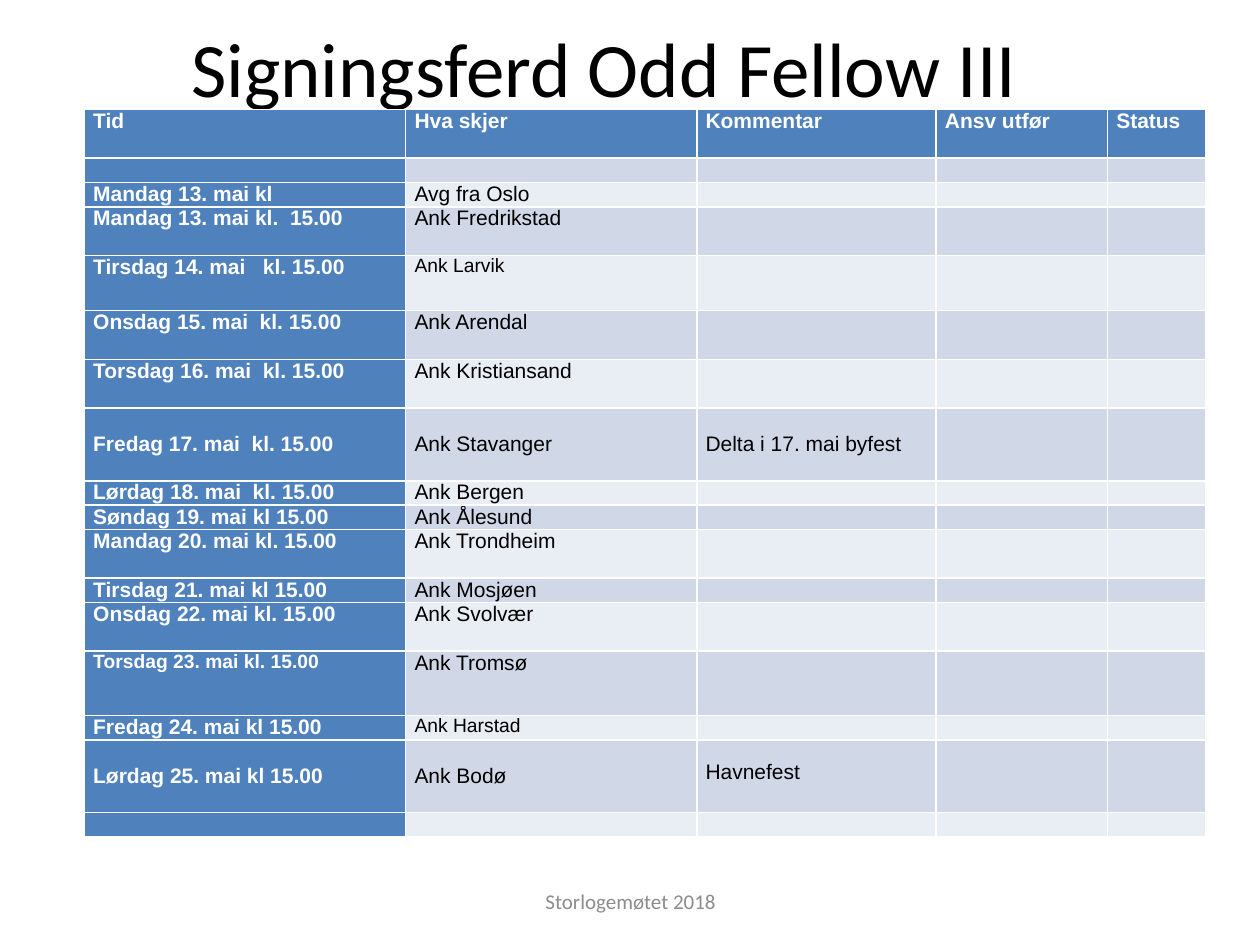
import pptx
import pptx.dml.color
import pptx.enum.text
import pptx.util
import lxml.etree

COLORS = {
    "blue": "4F81BD",
    "dark_band": "D0D8E8",
    "light_band": "E9EDF4",
    "white": "FFFFFF",
    "black": "000000",
    "footer": "8C8C8C",
}
MIDDLE = pptx.enum.text.MSO_ANCHOR.MIDDLE
CENTER = pptx.enum.text.PP_ALIGN.CENTER


def color(name):
    return pptx.dml.color.RGBColor.from_string(COLORS[name])


def write(frame, text, font, size, ink, bold=False):
    frame.text = text
    for run in frame.paragraphs[0].runs:
        run.font.name = font
        run.font.size = pptx.util.Pt(size)
        run.font.bold = bold
        run.font.color.rgb = color(ink)


deck = pptx.Presentation()
deck.slide_width = pptx.util.Inches(10)
deck.slide_height = pptx.util.Inches(7.5)
slide = deck.slides.add_slide(deck.slide_layouts[5])

# Title
title = slide.shapes.title
title.left, title.top = pptx.util.Inches(0.5), pptx.util.Inches(0.3)
title.width, title.height = pptx.util.Inches(8.59), pptx.util.Inches(0.46)
write(title.text_frame, "Signingsferd Odd Fellow III", "Calibri", 44, "black")
title.text_frame.auto_size = pptx.enum.text.MSO_AUTO_SIZE.NONE
title.text_frame.vertical_anchor = MIDDLE
title.text_frame.paragraphs[0].alignment = CENTER

# Itinerary: row height in text lines, followed by the filled columns
itinerary = [
    (2, "Tid", "Hva skjer", "Kommentar", "Ansv utfør", "Status"),
    (1,),
    (1, "Mandag 13. mai kl", "Avg fra Oslo"),
    (2, "Mandag 13. mai kl.  15.00", "Ank Fredrikstad"),
    (2.27, "Tirsdag 14. mai   kl. 15.00", "Ank Larvik"),
    (2, "Onsdag 15. mai  kl. 15.00", "Ank Arendal"),
    (2, "Torsdag 16. mai  kl. 15.00", "Ank Kristiansand"),
    (3, "Fredag 17. mai  kl. 15.00", "Ank Stavanger", "Delta i 17. mai byfest"),
    (1, "Lørdag 18. mai  kl. 15.00", "Ank Bergen"),
    (1, "Søndag 19. mai kl 15.00", "Ank Ålesund"),
    (2, "Mandag 20. mai kl. 15.00", "Ank Trondheim"),
    (1, "Tirsdag 21. mai kl 15.00", "Ank Mosjøen"),
    (2, "Onsdag 22. mai kl. 15.00", "Ank Svolvær"),
    (2.65, "Torsdag 23. mai kl. 15.00", "Ank Tromsø"),
    (1, "Fredag 24. mai kl 15.00", "Ank Harstad"),
    (3, "Lørdag 25. mai kl 15.00", "Ank Bodø", "Havnefest"),
    (1,),
]
smaller_entries = {"Ank Larvik", "Torsdag 23. mai kl. 15.00", "Ank Harstad"}
column_widths = [2.55, 2.31, 1.9, 1.36, 0.78]
line_height = pptx.util.Pt(13.9)
total_height = int(sum(row[0] for row in itinerary) * line_height)

schedule = slide.shapes.add_table(
    len(itinerary), len(column_widths),
    pptx.util.Inches(0.67), pptx.util.Inches(0.87),
    pptx.util.Inches(sum(column_widths)), total_height,
).table
schedule.first_col = True
for column, width in zip(schedule.columns, column_widths):
    column.width = pptx.util.Inches(width)

for r, (lines, *entries) in enumerate(itinerary):
    schedule.rows[r].height = int(lines * line_height)
    band = "dark_band" if r % 2 else "light_band"
    for c in range(len(column_widths)):
        cell = schedule.cell(r, c)
        heading = r == 0 or c == 0
        cell.fill.solid()
        cell.fill.fore_color.rgb = color("blue" if heading else band)
        cell.margin_left = cell.margin_right = pptx.util.Inches(0.07)
        cell.margin_top = cell.margin_bottom = 0
        if c < len(entries):
            size = 11 if entries[c] in smaller_entries else 12
            write(cell.text_frame, entries[c], "Arial", size,
                  "white" if heading else "black", heading)
            if entries[c] == "Havnefest":
                cell.margin_top = pptx.util.Inches(0.16)
            elif lines == 3:
                cell.vertical_anchor = MIDDLE
        else:
            # Small end mark keeps empty cells from stretching the row
            lxml.etree.SubElement(cell.text_frame.paragraphs[0]._p,
                                  pptx.oxml.ns.qn("a:endParaRPr"), sz="1000")

# Footer
footer = slide.shapes.add_textbox(
    pptx.util.Inches(3.42), pptx.util.Inches(6.95),
    pptx.util.Inches(3.17), pptx.util.Inches(0.4),
).text_frame
footer.word_wrap = True
footer.vertical_anchor = MIDDLE
write(footer, "Storlogemøtet 2018", "Calibri", 12, "footer")
footer.paragraphs[0].alignment = CENTER

deck.save("out.pptx")
